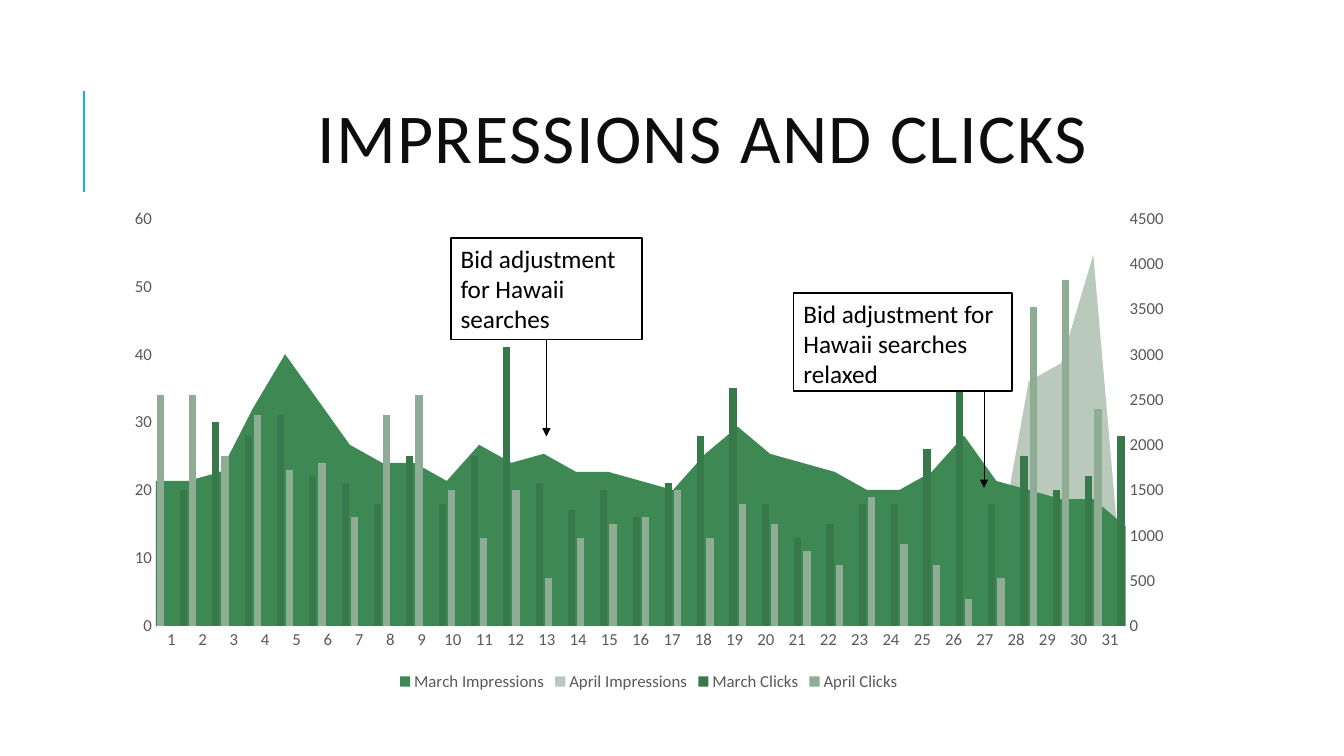
from copy import deepcopy

from lxml import etree
from pptx import Presentation
from pptx.chart.data import CategoryChartData
from pptx.dml.color import RGBColor
from pptx.enum.chart import XL_CHART_TYPE, XL_LEGEND_POSITION, XL_TICK_MARK
from pptx.enum.shapes import MSO_CONNECTOR, MSO_SHAPE
from pptx.enum.text import MSO_ANCHOR, PP_ALIGN
from pptx.oxml import parse_xml
from pptx.oxml.ns import nsdecls, qn
from pptx.util import Inches, Pt

COLUMN = XL_CHART_TYPE.COLUMN_CLUSTERED
BOTTOM = XL_LEGEND_POSITION.BOTTOM
NO_TICK = XL_TICK_MARK.NONE
STRAIGHT = MSO_CONNECTOR.STRAIGHT
RECT = MSO_SHAPE.RECTANGLE
MIDDLE, TOP = MSO_ANCHOR.MIDDLE, MSO_ANCHOR.TOP
LEFT, RIGHT = PP_ALIGN.LEFT, PP_ALIGN.RIGHT

WIDE, HIGH = 13.33, 7.5
FONT = "Calibri"
HUES = {"rule": "1CADE4", "title": "0D0D0D", "ink": "000000", "paper": "FFFFFF",
        "label": "595959", "grid": "D9D9D9"}
SERIES = [
    ("March Impressions", "3E8853",
     [1600, 1600, 1700, 2400, 3000, 2500, 2000, 1800, 1800, 1600, 2000, 1800, 1900, 1700, 1700, 1600,
      1500, 1900, 2200, 1900, 1800, 1700, 1500, 1500, 1700, 2100, 1600, 1500, 1400, 1400, 1100]),
    ("April Impressions", "B9CABD",
     [1500, 1300, 1300, 1200, 1200, 1000, 1100, 1100, 1100, 1000, 900, 900, 300, 300, 400, 500,
      500, 500, 500, 600, 600, 600, 900, 700, 600, 600, 700, 2700, 2900, 4100, None]),
    ("March Clicks", "37794A",
     [20, 20, 30, 28, 31, 22, 21, 18, 25, 18, 25, 41, 21, 17, 20, 16,
      21, 28, 35, 18, 13, 15, 18, 18, 26, 37, 18, 25, 20, 22, 28]),
    ("April Clicks", "8EAD94",
     [34, 34, 25, 31, 23, 24, 16, 31, 34, 20, 13, 20, 7, 13, 15, 16,
      20, 13, 18, 15, 11, 9, 19, 12, 9, 4, 7, 47, 51, 32, None]),
]
NOTES = [
    ((4.47, 2.36, 1.9, 1.01), 5.42, "Bid adjustment for Hawaii searches"),
    ((7.87, 2.91, 2.17, 0.97), 9.76, "Bid adjustment for Hawaii searches relaxed"),
]


def hue(name):
    """Turn a colour name into a colour."""
    return RGBColor.from_string(HUES[name])


def style(font, size, name):
    """Set face, size and colour of a font."""
    font.name, font.size = FONT, Pt(size)
    font.color.rgb = hue(name)


def line(shapes, start, end, name, width, arrow=False):
    """Draw a straight line, with an arrowhead if asked."""
    link = shapes.add_connector(STRAIGHT, *map(Inches, start + end))
    link.line.color.rgb = hue(name)
    link.line.width = Pt(width)
    props = link._element.spPr
    if arrow:
        etree.SubElement(props.find(qn("a:ln")), qn("a:tailEnd"), type="triangle")
    etree.SubElement(props, qn("a:effectLst"))


def head(slide, box):
    """Fill the title placeholder and draw the rule left of it."""
    x, y, w, h = box
    title = slide.shapes.title
    title.left, title.top, title.width, title.height = map(Inches, box)
    frame = title.text_frame
    frame.vertical_anchor = MIDDLE
    frame.margin_right = Inches(0.47)
    para = frame.paragraphs[0]
    para.alignment, para.line_spacing = RIGHT, 0.8
    run = para.add_run()
    run.text = "IMPRESSIONS AND CLICKS"
    style(run.font, 50, "title")
    run._r.get_or_add_rPr().set("spc", "100")
    line(slide.shapes, (x - 0.29, y + 1.26), (x - 0.29, y + 0.26), "rule", 1.5)


def split(chart):
    """Move the impressions into an area plot with its own right axis."""
    plot = chart._chartSpace.find(".//" + qn("c:plotArea"))
    bars, days, clicks = (plot.find(qn(tag)) for tag in ("c:barChart", "c:catAx", "c:valAx"))
    area = parse_xml(f'<c:areaChart {nsdecls("c")}><c:grouping val="standard"/>'
                     '<c:varyColors val="0"/></c:areaChart>')
    for ser in bars.findall(qn("c:ser"))[:2]:
        flip = ser.find(qn("c:invertIfNegative"))
        if flip is not None:
            ser.remove(flip)
        area.append(ser)
    for mark in ("11", "12"):
        etree.SubElement(area, qn("c:axId"), val=mark)
    bars.addprevious(area)

    hidden, views = deepcopy(days), deepcopy(clicks)
    for axis, mark, other in ((hidden, "11", "12"), (views, "12", "11")):
        axis.find(qn("c:axId")).set("val", mark)
        axis.find(qn("c:crossAx")).set("val", other)
    hidden.find(qn("c:delete")).set("val", "1")
    views.find(qn("c:axPos")).set("val", "r")
    views.find(qn("c:crosses")).set("val", "max")
    views.remove(views.find(qn("c:majorGridlines")))
    scale = views.find(qn("c:scaling"))
    scale.find(qn("c:max")).set("val", "4500")
    views.find(qn("c:majorUnit")).set("val", "500")
    days.addprevious(hidden)
    days.addprevious(views)

    old = plot.find(qn("c:layout"))
    if old is not None:
        plot.remove(old)
    spots = {"x": 0.04, "y": 0.04, "w": 0.905, "h": 0.82}
    sizes = "".join(f'<c:{key} val="{share}"/>' for key, share in spots.items())
    plot.insert(0, parse_xml(
        f'<c:layout {nsdecls("c")}><c:manualLayout><c:layoutTarget val="inner"/>'
        f'<c:xMode val="edge"/><c:yMode val="edge"/>{sizes}</c:manualLayout></c:layout>'))
    blank = chart._chartSpace.find(".//" + qn("c:dispBlanksAs"))
    blank.set("val", "zero")


def graph(slide, box):
    """Chart clicks as columns over impressions as areas."""
    data = CategoryChartData()
    data.categories = [str(day) for day in range(1, 32)]
    for name, _, vals in SERIES:
        data.add_series(name, vals)
    chart = slide.shapes.add_chart(COLUMN, *map(Inches, box), data).chart
    chart.has_title = False
    style(chart.font, 12, "label")
    chart.has_legend = True
    chart.legend.position = BOTTOM
    chart.legend.include_in_layout = False
    style(chart.legend.font, 12, "label")
    plot = chart.plots[0]
    plot.gap_width, plot.overlap = 219, -27
    plot.vary_by_categories = False
    for ser, (_, tint, _) in zip(plot.series, SERIES):
        ser.format.fill.solid()
        ser.format.fill.fore_color.rgb = RGBColor.from_string(tint)
    days, clicks = chart.category_axis, chart.value_axis
    for axis in (days, clicks):
        axis.major_tick_mark = axis.minor_tick_mark = NO_TICK
        style(axis.tick_labels.font, 12, "label")
    days.format.line.color.rgb = hue("grid")
    clicks.format.line.fill.background()
    clicks.minimum_scale, clicks.maximum_scale, clicks.major_unit = 0, 60, 10
    grid = clicks.major_gridlines.format.line
    grid.color.rgb = hue("grid")
    grid.width = Pt(0.75)
    split(chart)


def note(slide, box, stem, text):
    """Group a boxed remark with an arrow pointing down from it."""
    shapes = slide.shapes.add_group_shape().shapes
    card = shapes.add_shape(RECT, *map(Inches, box))
    card.shadow.inherit = False
    card.fill.solid()
    card.fill.fore_color.rgb = hue("paper")
    card.line.color.rgb = hue("ink")
    card.line.width = Pt(1.25)
    frame = card.text_frame
    frame.word_wrap = True
    frame.vertical_anchor = TOP
    para = frame.paragraphs[0]
    para.alignment = LEFT
    run = para.add_run()
    run.text = text
    style(run.font, 18, "ink")
    base = box[1] + box[3]
    line(shapes, (stem, base), (stem, base + 0.96), "ink", 0.75, True)


def main():
    """Build the slide and save it."""
    deck = Presentation()
    deck.slide_width, deck.slide_height = Inches(WIDE), Inches(HIGH)
    slide = deck.slides.add_slide(deck.slide_layouts[5])
    head(slide, (1.12, 0.64, 10.14, 1.57))
    graph(slide, (1.12, 1.97, 10.63, 4.93))
    for box, stem, text in NOTES:
        note(slide, box, stem, text)
    deck.save("out.pptx")


if __name__ == "__main__":
    main()
